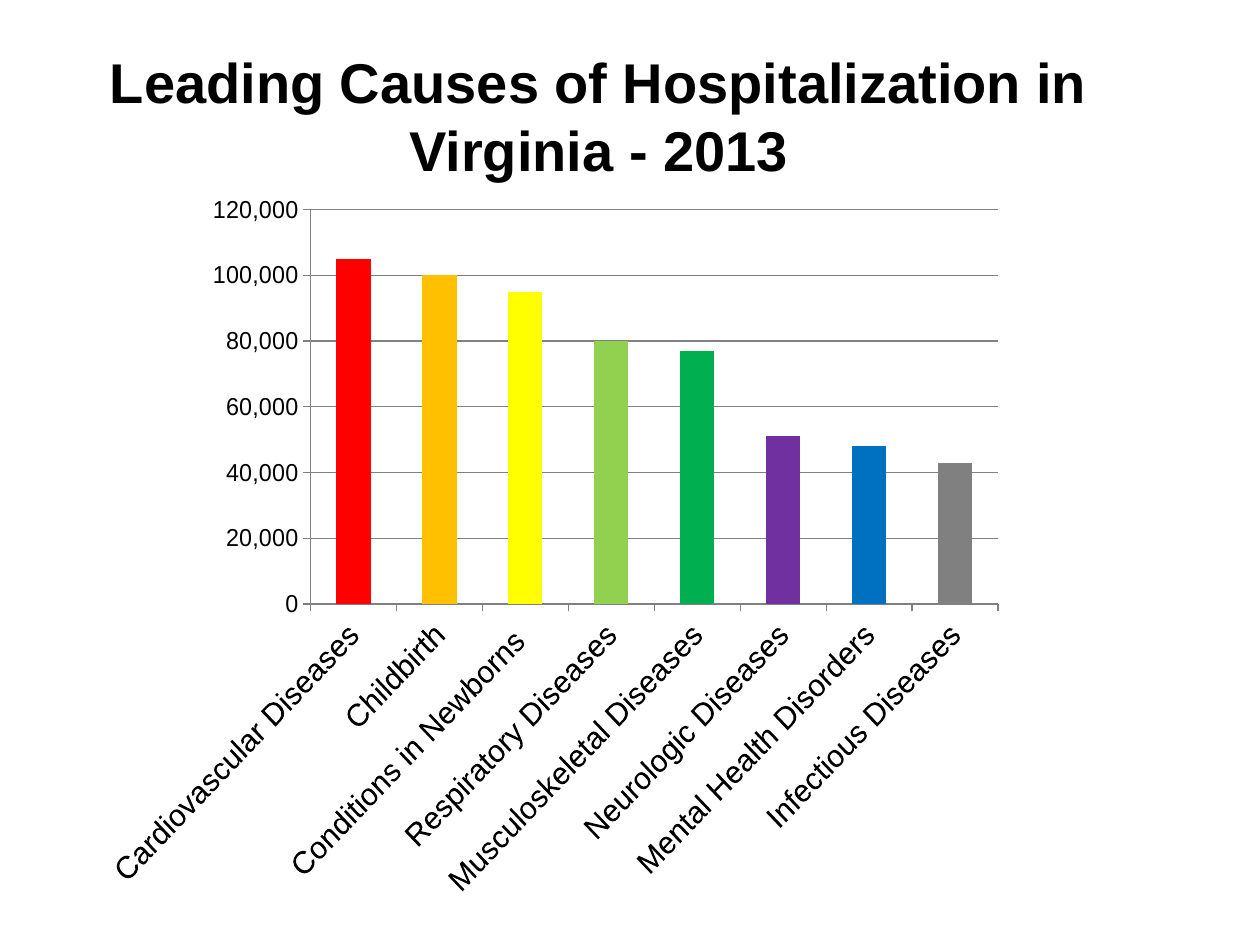
import pptx
import pptx.chart.data
import pptx.dml.color
import pptx.enum.chart
import pptx.enum.text
import pptx.oxml
import pptx.oxml.ns
import pptx.util
from pptx.dml.color import RGBColor
from pptx.util import Cm

FONT = "Arial"
BLACK = RGBColor(0x00, 0x00, 0x00)
GRAY = RGBColor(0x80, 0x80, 0x80)
RED = RGBColor(0xFF, 0x00, 0x00)
ORANGE = RGBColor(0xFF, 0xC0, 0x00)
YELLOW = RGBColor(0xFF, 0xFF, 0x00)
LIME = RGBColor(0x92, 0xD0, 0x50)
GREEN = RGBColor(0x00, 0xB0, 0x50)
PURPLE = RGBColor(0x70, 0x30, 0xA0)
BLUE = RGBColor(0x00, 0x70, 0xC0)

# Cause, hospitalizations, bar colour
CAUSES = [
    ("Cardiovascular Diseases", 105000, RED),
    ("Childbirth", 100000, ORANGE),
    ("Conditions in Newborns ", 95000, YELLOW),
    ("Respiratory Diseases", 80000, LIME),
    ("Musculoskeletal Diseases", 77000, GREEN),
    ("Neurologic Diseases", 51000, PURPLE),
    ("Mental Health Disorders", 48000, BLUE),
    ("Infectious Diseases", 43000, GRAY),
]


class Deck:
    def __init__(self, s, font, color):
        self.s, self.font, self.color = s, font, color

    def style(self, font, size, bold=False):
        font.name = self.font
        font.size = pptx.util.Pt(size)
        font.bold = bold
        font.color.rgb = self.color

    def title(self, text, x, y, w, h, size):
        sp = self.s.shapes.add_textbox(Cm(x), Cm(y), Cm(w), Cm(h))
        tf = sp.text_frame
        tf.word_wrap = True
        tf.auto_size = pptx.enum.text.MSO_AUTO_SIZE.SHAPE_TO_FIT_TEXT
        p = tf.paragraphs[0]
        p.alignment = pptx.enum.text.PP_ALIGN.CENTER
        r = p.add_run()
        r.text = text
        self.style(r.font, size, bold=True)

    def axis(self, axis, size):
        axis.major_tick_mark = pptx.enum.chart.XL_TICK_MARK.OUTSIDE
        axis.minor_tick_mark = pptx.enum.chart.XL_TICK_MARK.NONE
        self.line(axis.format.line)
        self.style(axis.tick_labels.font, size)

    def line(self, line):
        line.color.rgb = GRAY
        line.width = pptx.util.Pt(0.75)

    def columns(self, rows, x, y, w, h, plot_box):
        data = pptx.chart.data.CategoryChartData(number_format="General")
        data.categories = [name for name, _, _ in rows]
        data.add_series("Series 1", [value for _, value, _ in rows])
        kind = pptx.enum.chart.XL_CHART_TYPE.COLUMN_CLUSTERED
        chart = self.s.shapes.add_chart(kind, Cm(x), Cm(y), Cm(w), Cm(h), data).chart
        chart.has_legend = False
        chart.has_title = False
        self.style(chart.font, 18)

        # Bars
        plot = chart.plots[0]
        plot.vary_by_categories = False
        plot.gap_width = 150
        series = plot.series[0]
        series.format.fill.solid()
        series.format.fill.fore_color.rgb = rows[0][2]
        for i, (_, _, color) in enumerate(rows[1:], 1):
            fill = series.points[i].format.fill
            fill.solid()
            fill.fore_color.rgb = color

        # Axes, with slanted category labels
        cat, val = chart.category_axis, chart.value_axis
        self.axis(cat, 18)
        qn = pptx.oxml.ns.qn
        body = cat._element.find(qn("c:txPr")).find(qn("a:bodyPr"))
        body.set("rot", "-2700000")
        body.set("vert", "horz")
        self.axis(val, 14)
        val.minimum_scale, val.maximum_scale, val.major_unit = 0, 120000, 20000
        val.tick_labels.number_format = "#,##0"
        val.tick_labels.number_format_is_linked = False
        val.has_major_gridlines = True
        self.line(val.major_gridlines.format.line)
        self.place_plot(chart, plot_box)

    def place_plot(self, chart, box):
        qn = pptx.oxml.ns.qn
        area = chart._chartSpace.find(qn("c:chart")).find(qn("c:plotArea"))
        old = area.find(qn("c:layout"))
        if old is not None:
            area.remove(old)
        parts = [("layoutTarget", "inner"), ("xMode", "edge"), ("yMode", "edge")]
        parts += zip("xywh", box)
        inner = "".join(f'<c:{tag} val="{val}"/>' for tag, val in parts)
        area.insert(0, pptx.oxml.parse_xml(
            f'<c:layout {pptx.oxml.ns.nsdecls("c")}>'
            f"<c:manualLayout>{inner}</c:manualLayout></c:layout>"))


def main():
    prs = pptx.Presentation()
    prs.slide_width, prs.slide_height = Cm(25.4), Cm(19.05)
    deck = Deck(prs.slides.add_slide(prs.slide_layouts[6]), FONT, BLACK)

    # Column chart
    deck.columns(CAUSES, 2.16, 1.6, 18.31, 17.75, (0.184, 0.148, 0.796, 0.448))

    # Title
    deck.title("Leading Causes of Hospitalization in Virginia - 2013",
               0.43, 0.84, 23.29, 3, 32)

    prs.save("out.pptx")


if __name__ == "__main__":
    main()
